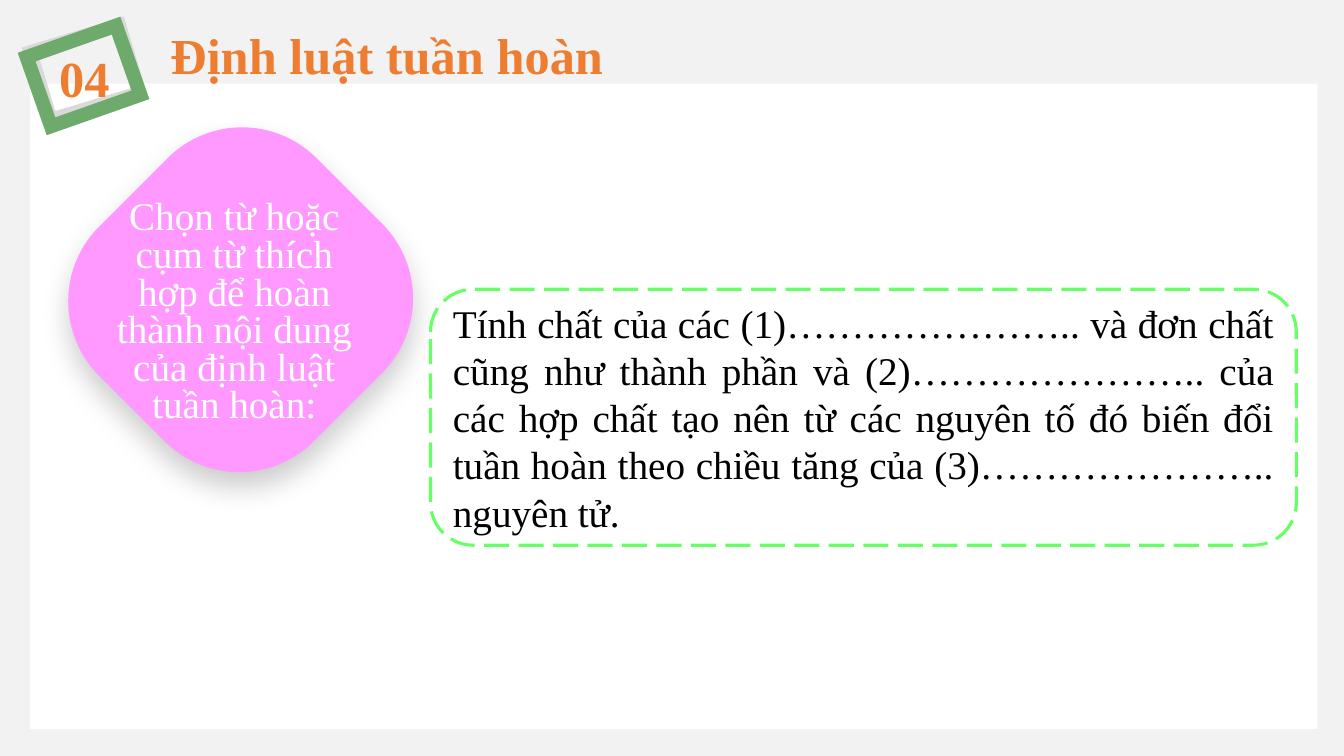
from dataclasses import dataclass

from lxml import etree
from pptx import Presentation
from pptx.dml.color import RGBColor
from pptx.enum import dml, shapes, text
from pptx.oxml import ns, parse_xml
from pptx.util import Cm, Pt

FONT = "Times New Roman"
ORANGE = "ED7D31"
WHITE = "FFFFFF"
RECT = shapes.MSO_SHAPE.RECTANGLE
ROUND = shapes.MSO_SHAPE.ROUNDED_RECTANGLE
ALIGN = text.PP_ALIGN


@dataclass
class Box:
    left: float
    top: float
    width: float
    height: float

    def cm(self) -> list:
        return [Cm(v) for v in (self.left, self.top, self.width, self.height)]


@dataclass
class Form:
    box: Box
    kind: int = RECT
    turn: float = 0
    fill: str = ""
    line: str = ""
    weight: float = 0


@dataclass
class Label:
    words: str
    size: float
    color: str
    align: int = ALIGN.LEFT
    bold: bool = False
    space: float = 1.0
    wrap: bool = True
    anchor: int = text.MSO_ANCHOR.TOP


def rgb(code: str) -> RGBColor:
    return RGBColor.from_string(code)


def draw(slide, form: Form):
    shape = slide.shapes.add_shape(form.kind, *form.box.cm())
    shape.rotation = form.turn
    shape.shadow.inherit = False
    if form.fill:
        shape.fill.solid()
        shape.fill.fore_color.rgb = rgb(form.fill)
    else:
        shape.fill.background()
    if form.line:
        shape.line.color.rgb = rgb(form.line)
        shape.line.width = Pt(form.weight)
        miter = etree.SubElement(shape.line._get_or_add_ln(), ns.qn("a:miter"))
        miter.set("lim", "800000")
    else:
        shape.line.fill.background()
    return shape


def write(shape, label: Label) -> None:
    frame = shape.text_frame
    frame.auto_size = text.MSO_AUTO_SIZE.NONE
    frame.word_wrap = label.wrap
    frame.vertical_anchor = label.anchor
    frame.text = label.words
    para = frame.paragraphs[0]
    para.alignment = label.align
    para.line_spacing = label.space
    font = para.font
    font.name, font.size, font.bold = FONT, Pt(label.size), label.bold
    font.color.rgb = rgb(label.color)


def shade(shape) -> None:
    """Give the shape a soft shadow that falls straight down."""
    effects = shape._element.spPr.find(ns.qn("a:effectLst"))
    effects.append(parse_xml(
        f'<a:outerShdw {ns.nsdecls("a")} blurRad="{Pt(20)}" dist="{Pt(10)}" '
        'dir="5400000" algn="t" rotWithShape="0"><a:srgbClr val="000000">'
        '<a:alpha val="20000"/></a:srgbClr></a:outerShdw>'))


PANEL = Form(Box(0.76, 2.11, 32.44, 16.26), fill=WHITE)
FRAMES = [
    Form(Box(0.97, 0.94, 2.34, 1.78), turn=343.2, line="D9D9D9", weight=10),
    Form(Box(0.91, 0.99, 2.39, 1.85), turn=340.6, line="6EAA6B", weight=10),
]
GEM = Form(Box(2.24, 3.68, 7.65, 7.75), ROUND, turn=45, fill="FF99FF")
LAW = Form(Box(10.85, 7.29, 21.82, 6.45), ROUND, fill=WHITE,
           line="66FF66", weight=2.25)

HEAD = Label("Định luật tuần hoàn", 36, ORANGE, bold=True, wrap=False)
NOTES = [
    (Box(1.24, 1.07, 1.88, 1.8), Label("04", 36, ORANGE, bold=True)),
    (Box(2.59, 4.93, 6.63, 2.03), Label(
        "Chọn từ hoặc cụm từ thích hợp để hoàn thành nội dung "
        "của định luật tuần hoàn:", 28, WHITE, ALIGN.CENTER, space=0.8)),
]
GAPS = Label(
    "Tính chất của các (1)………………….. và đơn chất cũng như thành phần "
    "và (2)………………….. của các hợp chất tạo nên từ các nguyên tố đó "
    "biến đổi tuần hoàn theo chiều tăng của (3)………………….. nguyên tử.",
    28, "000000", ALIGN.JUSTIFY, anchor=text.MSO_ANCHOR.MIDDLE)


def main() -> None:
    deck = Presentation()
    deck.slide_width, deck.slide_height = Cm(33.87), Cm(19.05)
    slide = deck.slides.add_slide(deck.slide_layouts[5])
    slide.background.fill.solid()
    slide.background.fill.fore_color.rgb = rgb("F2F2F2")

    for form in [PANEL, *FRAMES]:
        draw(slide, form)

    title = slide.shapes.title
    title.left, title.top, title.width, title.height = Box(4.04, 0.48, 11.53, 1.8).cm()
    write(title, HEAD)
    slide.shapes._spTree.append(title._element)  # bring above the panel

    gem = draw(slide, GEM)
    gem.adjustments[0] = 0.347
    shade(gem)
    for box, label in NOTES:
        write(slide.shapes.add_textbox(*box.cm()), label)

    law = draw(slide, LAW)
    law.line.dash_style = dml.MSO_LINE.LONG_DASH
    write(law, GAPS)

    deck.save("out.pptx")


if __name__ == "__main__":
    main()
